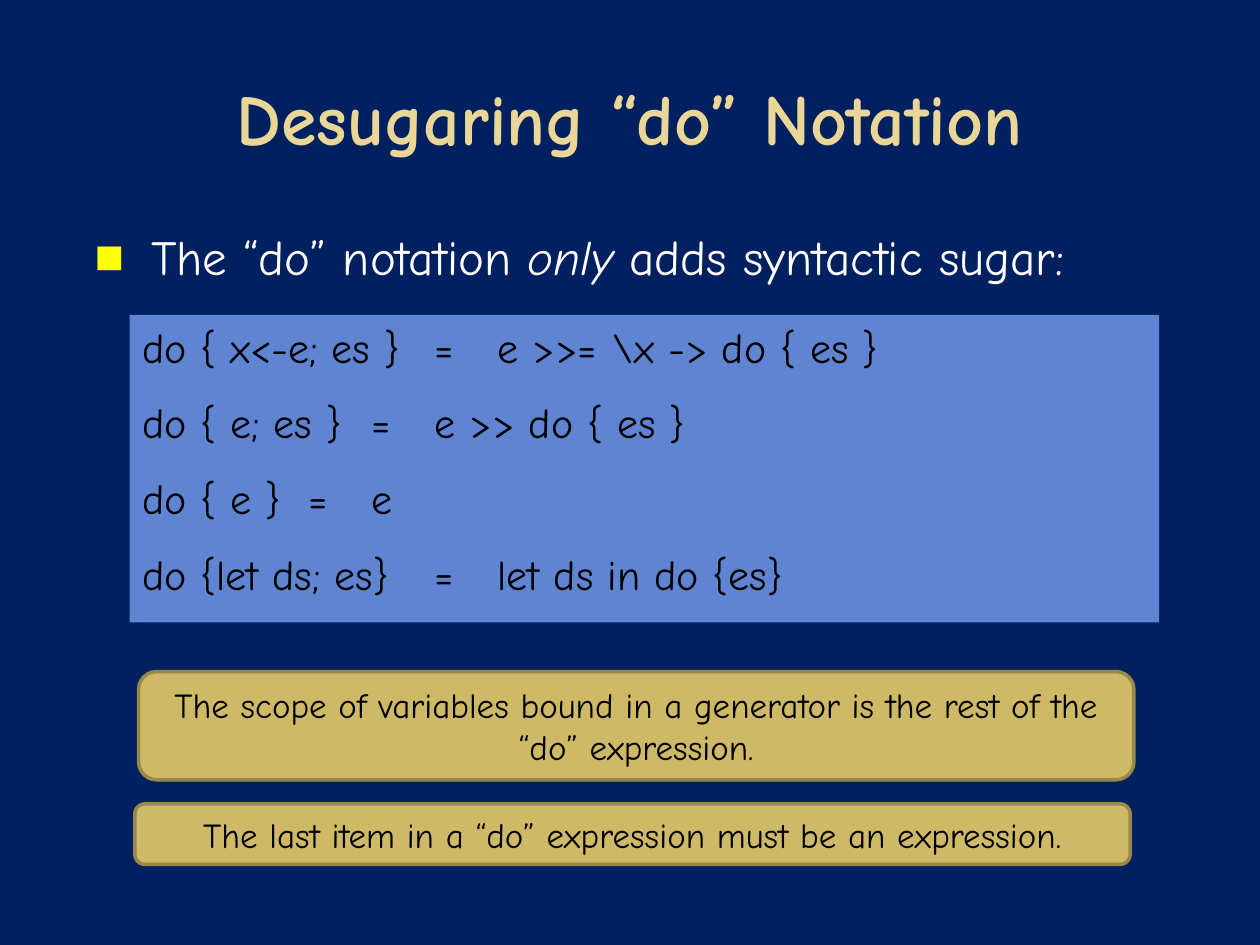
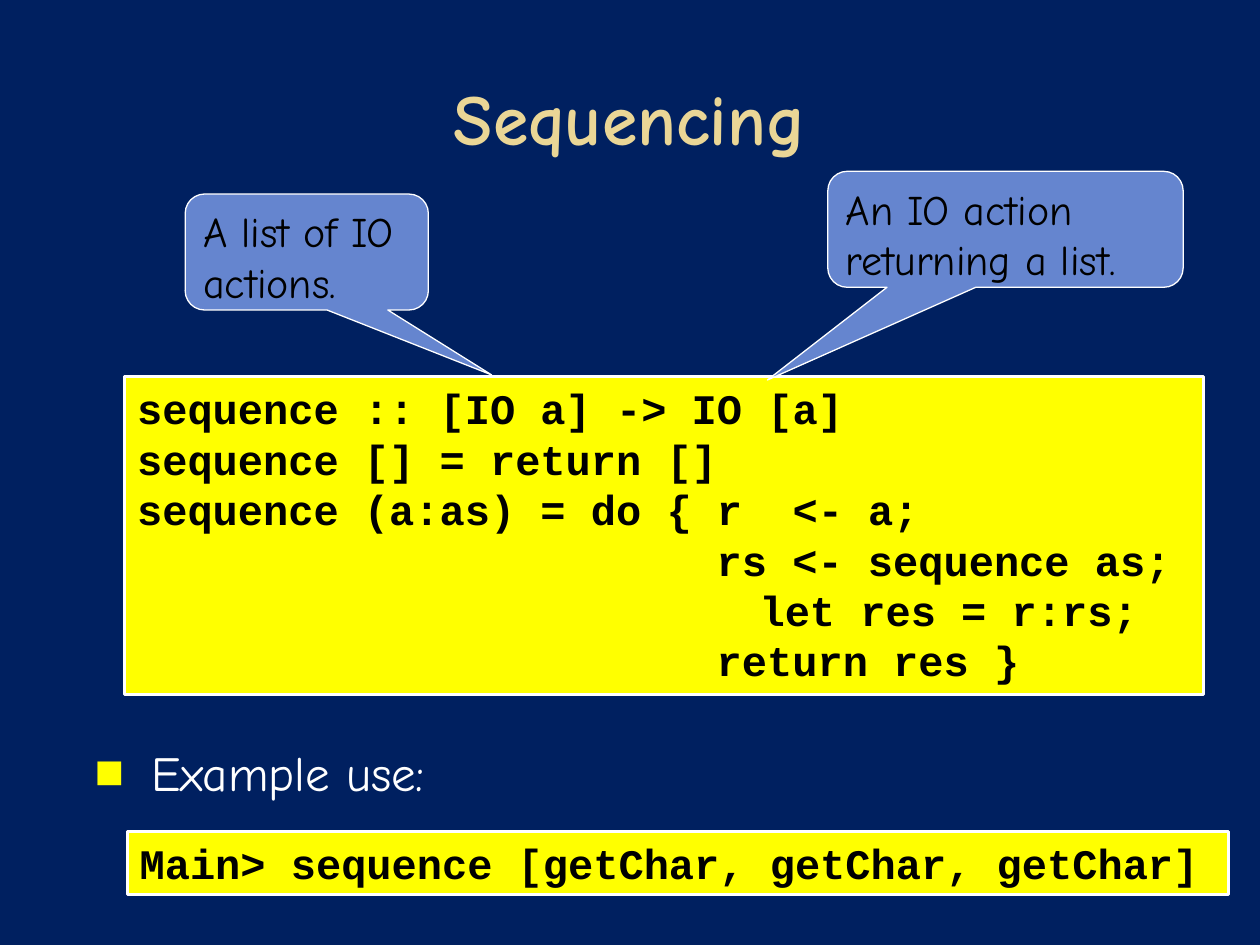
from lxml import etree
from pptx import Presentation
from pptx import util as u
from pptx.dml import color
from pptx.enum import shapes, text
from pptx.oxml import ns

NAVY, GOLD, WHITE, BLACK, YELLOW = "002060", "EAD696", "FFFFFF", "000000", "FFFF00"
PANEL_BLUE, CALLOUT_BLUE = "5F84D2", "6585CF"
NOTE_FILL, NOTE_LINE = "CEB966", "98894B"
BODY_FONT, CODE_FONT = "Comic Neue", "Courier New"


def rgb(value):
    return color.RGBColor.from_string(value)


def place(shape, left, top, width, height):
    shape.left, shape.top = u.Inches(left), u.Inches(top)
    shape.width, shape.height = u.Inches(width), u.Inches(height)


def format_runs(paragraph, size, shade, font=BODY_FONT, bold=False):
    for run in paragraph.runs:
        run.font.name = font
        run.font.size = u.Pt(size)
        run.font.bold = bold
        run.font.color.rgb = rgb(shade)


def set_indent(paragraph, margin, first=0):
    properties = paragraph._p.get_or_add_pPr()
    properties.set("marL", str(u.Inches(margin)))
    properties.set("indent", str(u.Inches(first)))


def add_property(paragraph, tag, **attributes):
    properties = paragraph._p.get_or_add_pPr()
    return etree.SubElement(properties, ns.qn(tag), attributes)


def set_bullet(paragraph):
    bullet_color = add_property(paragraph, "a:buClr")
    etree.SubElement(bullet_color, ns.qn("a:srgbClr"), val=YELLOW)
    add_property(paragraph, "a:buFont", typeface="Arial")
    add_property(paragraph, "a:buChar", char="■")


def set_tabs(paragraph, positions):
    tabs = add_property(paragraph, "a:tabLst")
    for position in positions:
        etree.SubElement(tabs, ns.qn("a:tab"), pos=str(u.Inches(position)), algn="l")


def add_slide(presentation, title, bullet_runs, body_top):
    slide = presentation.slides.add_slide(presentation.slide_layouts[1])
    heading, body = slide.placeholders
    place(heading, 0.5, 0.3, 9, 1.25)
    heading.text_frame.text = title
    heading.text_frame.vertical_anchor = text.MSO_ANCHOR.MIDDLE
    heading.text_frame.paragraphs[0].alignment = text.PP_ALIGN.CENTER
    format_runs(heading.text_frame.paragraphs[0], 41, GOLD, bold=True)

    place(body, 0.5, body_top, 9, 0.6)
    body.text_frame.auto_size = text.MSO_AUTO_SIZE.NONE
    paragraph = body.text_frame.paragraphs[0]
    for words, italic in bullet_runs:
        run = paragraph.add_run()
        run.text = words
        run.font.italic = italic
    format_runs(paragraph, 28, WHITE)
    paragraph.space_before = u.Pt(18)
    set_indent(paragraph, 0.6, -0.45)
    set_bullet(paragraph)
    return slide


def add_box(slide, kind, frame, fill, line=None, line_width=0):
    shape = slide.shapes.add_shape(kind, *(u.Inches(value) for value in frame))
    shape.shadow.inherit = False
    shape.fill.solid()
    shape.fill.fore_color.rgb = rgb(fill)
    if line:
        shape.line.color.rgb = rgb(line)
        shape.line.width = u.Pt(line_width)
    else:
        shape.line.fill.background()
    shape.text_frame.word_wrap = True
    shape.text_frame.vertical_anchor = text.MSO_ANCHOR.TOP
    return shape


def add_callout(slide, frame, words, tail, fill, line, line_width, size):
    kind = shapes.MSO_SHAPE.ROUNDED_RECTANGULAR_CALLOUT
    shape = add_box(slide, kind, frame, fill, line, line_width)
    shape.adjustments[0], shape.adjustments[1] = tail
    shape.text_frame.text = words
    paragraph = shape.text_frame.paragraphs[0]
    paragraph.alignment = text.PP_ALIGN.LEFT
    format_runs(paragraph, size, BLACK)
    return shape


def add_note(slide, frame, words):
    note = add_callout(slide, frame, words, (-0.24, 0.5), NOTE_FILL, NOTE_LINE, 2, 20)
    note.text_frame.vertical_anchor = text.MSO_ANCHOR.MIDDLE
    note.text_frame.paragraphs[0].alignment = text.PP_ALIGN.CENTER


def add_speech(slide, frame, words, tail):
    add_callout(slide, frame, words, tail, CALLOUT_BLUE, WHITE, 0.75, 24)


def fill_lines(shape, lines, font, bold=False, space_before=0):
    shape.text_frame.text = "\n".join(lines)
    for paragraph in shape.text_frame.paragraphs:
        paragraph.alignment = text.PP_ALIGN.LEFT
        paragraph.space_before = u.Pt(space_before)
        set_indent(paragraph, 0.32, -0.32)
        format_runs(paragraph, 24, BLACK, font, bold)
    return shape.text_frame.paragraphs


def add_rules(slide, frame, lines):
    panel = add_box(slide, shapes.MSO_SHAPE.RECTANGLE, frame, PANEL_BLUE)
    return fill_lines(panel, lines, BODY_FONT, space_before=14.5)


def add_code(slide, frame, lines):
    panel = add_box(slide, shapes.MSO_SHAPE.RECTANGLE, frame, YELLOW, WHITE, 1.5)
    return fill_lines(panel, lines, CODE_FONT, bold=True)


def build_desugaring(presentation):
    bullet = [("The “do” notation ", False), ("only ", True),
              ("adds syntactic sugar:", False)]
    slide = add_slide(presentation, "Desugaring “do” Notation", bullet, 1.75)
    rules = add_rules(slide, (1.03, 2.5, 8.17, 2.44), [
        "do { x<-e; es } \t= \te >>= \\x -> do { es }",
        "do { e; es }\t=\te >> do { es }",
        "do { e }\t=\te",
        "do {let ds; es}\t=\tlet ds in do {es}",
    ])
    set_tabs(rules[-1], (2.85, 3.55))
    add_note(slide, (1.1, 5.33, 7.9, 0.86),
             "The scope of variables bound in a generator is the rest of the "
             "“do” expression.")
    add_note(slide, (1.07, 6.38, 7.9, 0.48),
             "The last item in a “do” expression must be an expression.")


def build_sequencing(presentation):
    slide = add_slide(presentation, "Sequencing", [("Example use:", False)], 5.84)
    code = add_code(slide, (0.99, 2.99, 8.56, 2.52), [
        "sequence :: [IO a] -> IO [a]",
        "sequence [] = return []",
        "sequence (a:as) = do { r  <- a;",
        "rs <- sequence as;",
        "let res = r:rs;",
        "return res }",
    ])
    for paragraph, margin in zip(code[3:], (4.6, 4.94, 4.6)):
        set_indent(paragraph, margin)
    add_code(slide, (1.01, 6.6, 8.74, 0.5),
             ["Main> sequence [getChar, getChar, getChar]"])
    add_speech(slide, (1.47, 1.54, 1.93, 0.92), "A list of IO actions.", (0.76, 1.06))
    add_speech(slide, (6.57, 1.36, 2.82, 0.92), "An IO action returning a list.",
               (-0.67, 1.3))


def main():
    presentation = Presentation()
    presentation.slide_width, presentation.slide_height = u.Inches(10), u.Inches(7.5)
    background = presentation.slide_master.background.fill
    background.solid()
    background.fore_color.rgb = rgb(NAVY)
    build_desugaring(presentation)
    build_sequencing(presentation)
    presentation.save("out.pptx")


if __name__ == "__main__":
    main()
